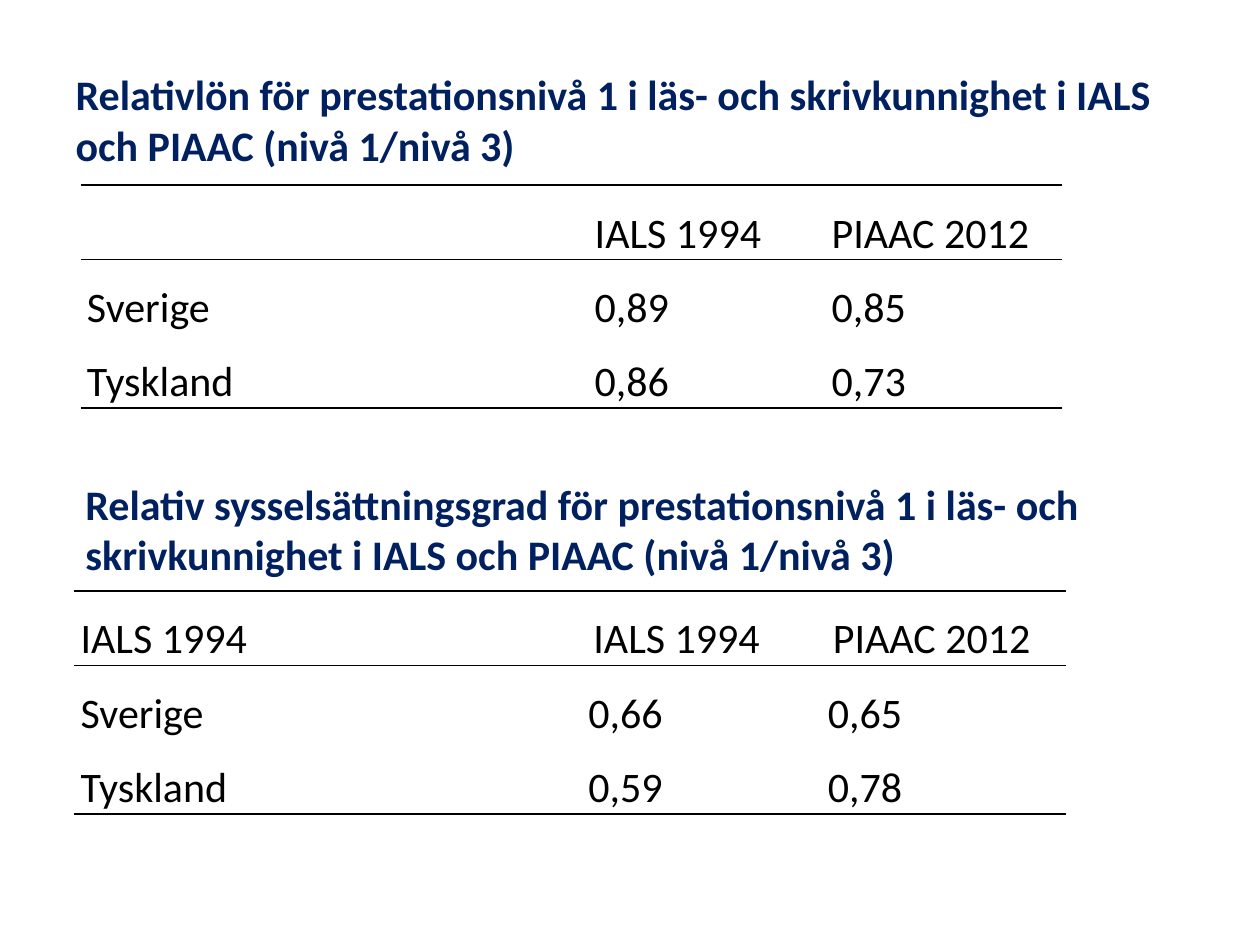
from lxml.etree import SubElement
from pptx import Presentation
from pptx.dml.color import RGBColor as RGB
from pptx.enum.text import MSO_ANCHOR as Anchor, PP_ALIGN as Align
from pptx.oxml.ns import qn
from pptx.util import Inches, Pt

COLORS = {"heading": "002060", "text": "000000", "line": "000000", "cell": "FFFFFF"}
FONT, SIZE = "Calibri", 24
ROW_HEIGHT = 0.59
TEXT_INSET, NUMBER_INSET = (0.05, 0, 0.05, 0), (0.01, 0.01, 0.01, 0)


def write(tf, text, color="text", bold=False, spacing=1.0):
    p = tf.paragraphs[0]
    p.alignment = Align.LEFT
    p.line_spacing = spacing
    r = p.add_run()
    r.text = text
    r.font.name, r.font.size, r.font.bold = FONT, Pt(SIZE), bold
    r.font.color.rgb = RGB.from_string(COLORS[color])


def heading(sp, text, left, top, width, height):
    sp.left, sp.top, sp.width, sp.height = map(Inches, (left, top, width, height))
    tf = sp.text_frame
    tf.word_wrap = True
    tf.vertical_anchor = Anchor.MIDDLE
    write(tf, text, color="heading", bold=True)


def borders(cell, ruled):
    """Draw the ruled edges (T, B) of a cell and clear the others."""
    tc_pr = cell._tc.get_or_add_tcPr()
    for edge in "LRTB":
        ln = SubElement(tc_pr, qn(f"a:ln{edge}"), w=str(Pt(1)))
        if edge in ruled:
            fill = SubElement(ln, qn("a:solidFill"))
            SubElement(fill, qn("a:srgbClr"), val=COLORS["line"])
        else:
            SubElement(ln, qn("a:noFill"))


def fill_cell(cell, text, ruled, inset, spacing):
    borders(cell, ruled)
    cell.fill.solid()
    cell.fill.fore_color.rgb = RGB.from_string(COLORS["cell"])
    cell.vertical_anchor = Anchor.BOTTOM
    (cell.margin_left, cell.margin_top,
     cell.margin_right, cell.margin_bottom) = map(Inches, inset)
    if text:
        write(cell.text_frame, text, spacing=spacing)


def ruled_table(s, rows, left, top, widths, tight_numbers=False):
    frame = s.shapes.add_table(len(rows), len(widths), Inches(left), Inches(top),
                               Inches(sum(widths)), Inches(ROW_HEIGHT * len(rows)))
    table = frame.table
    table.first_row = table.horz_banding = False
    for column, width in zip(table.columns, widths):
        column.width = Inches(width)
    # Rules above and below the header, and below the last row
    edges = ["TB"] + ["T"] + [""] * (len(rows) - 3) + ["B"]
    for i, row in enumerate(rows):
        table.rows[i].height = Inches(ROW_HEIGHT)
        for j, text in enumerate(row):
            tight = tight_numbers and i > 0 and j > 0
            fill_cell(table.cell(i, j), text, edges[i],
                      inset=NUMBER_INSET if tight else TEXT_INSET,
                      spacing=1.0 if tight else 1.15)


def main():
    prs = Presentation()
    prs.slide_width, prs.slide_height = Inches(10), Inches(7.5)
    s = prs.slides.add_slide(prs.slide_layouts[5])

    # Relative wage
    heading(s.shapes.title, "Relativlön för prestationsnivå 1 i läs- och "
            "skrivkunnighet i IALS och PIAAC (nivå 1/nivå 3)", 0.5, 0.32, 9, 1.25)
    ruled_table(s, [("", "IALS 1994", "PIAAC 2012"),
                    ("Sverige", "0,89", "0,85"),
                    ("Tyskland", "0,86", "0,73")],
                0.64, 1.47, (4.03, 1.88, 1.88))

    # Relative employment rate
    caption = s.shapes.add_textbox(0, 0, 0, 0)
    heading(caption, "Relativ sysselsättningsgrad för prestationsnivå 1 i läs- och "
            "skrivkunnighet i IALS och PIAAC (nivå 1/nivå 3)", 0.58, 3.69, 9, 1.01)
    ruled_table(s, [("IALS 1994", "IALS 1994", "PIAAC 2012"),
                    ("Sverige", "0,66", "0,65"),
                    ("Tyskland", "0,59", "0,78")],
                0.59, 4.69, (4.07, 1.9, 1.9), tight_numbers=True)

    prs.save("out.pptx")


if __name__ == "__main__":
    main()
